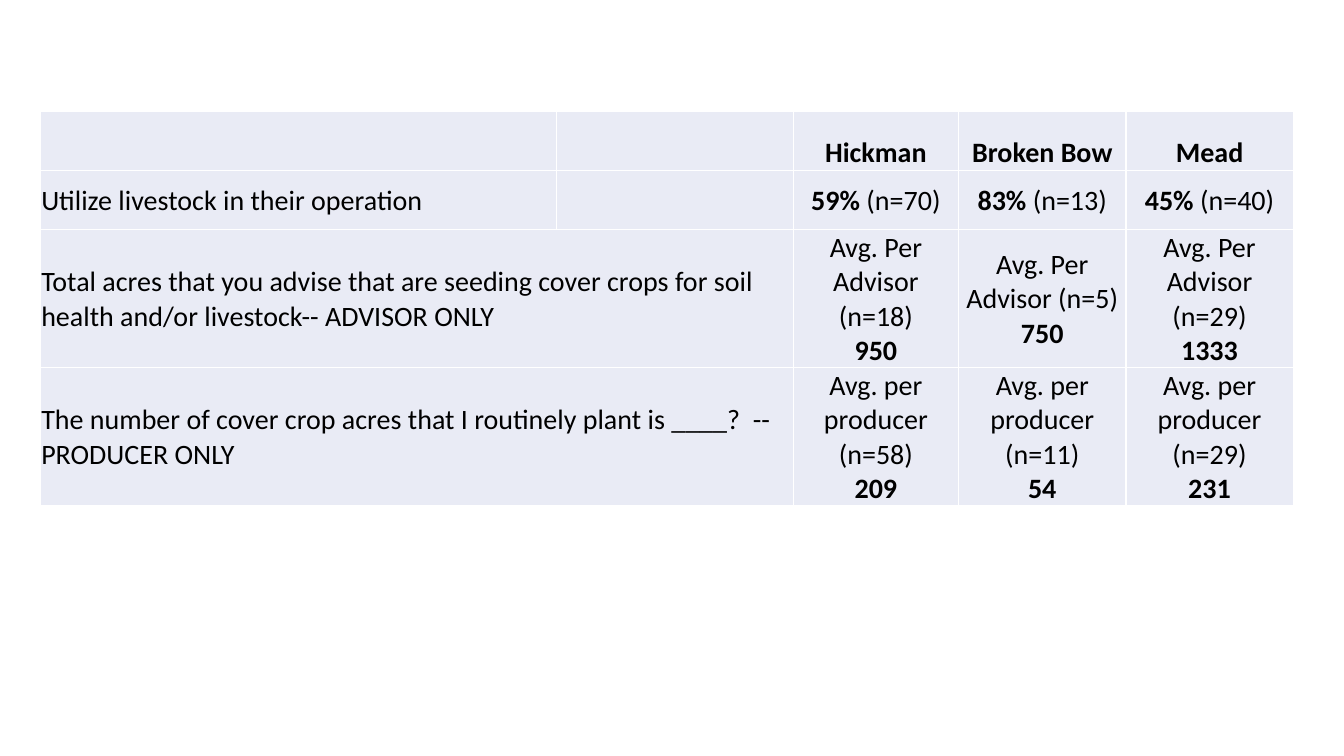
"""Builds a slide with a table of cover crop survey results for three towns."""
from lxml import etree
from pptx import Presentation
from pptx.dml.color import RGBColor
from pptx.enum.text import MSO_ANCHOR, PP_ALIGN
from pptx.oxml.ns import qn
from pptx.util import Pt

LEFT, MID = PP_ALIGN.LEFT, PP_ALIGN.CENTER
LOW, HALF = MSO_ANCHOR.BOTTOM, MSO_ANCHOR.MIDDLE

TOWNS = ["Hickman", "Broken Bow", "Mead"]
USE = [("59%", "n=70"), ("83%", "n=13"), ("45%", "n=40")]
ADVICE = [("n=18", "950"), ("n=5", "750"), ("n=29", "1333")]
ACRES = [("n=58", "209"), ("n=11", "54"), ("n=29", "231")]
ROWS = [
    ("", [[[(town, True)]] for town in TOWNS]),
    ("Utilize livestock in their operation",
     [[[(f"{share} ", True), (f"({size})", False)]] for share, size in USE]),
    ("Total acres that you advise that are seeding cover crops for soil "
     "health and/or livestock-- ADVISOR ONLY",
     [[[(f"Avg. Per Advisor ({size})", False)], [(mean, True)]] for size, mean in ADVICE]),
    ("The number of cover crop acres that I routinely plant is ____?  -- PRODUCER ONLY",
     [[[(f"Avg. per producer ({size})", False)], [(mean, True)]] for size, mean in ACRES]),
]
WIDE = [368.6, 169.2, 118.2, 119.5, 119.5]
HIGH = [42.3, 42.3, 98.4, 98.4]
SPOT = (28.8, 79.5)
SPANS = (2, 3)
INK, PALE, WHITE = "000000", "E9EBF5", "FFFFFF"
EDGES = ("a:lnL", "a:lnR", "a:lnT", "a:lnB")
INSET = {"margin_left": Pt(0.7), "margin_right": Pt(0.7),
         "margin_top": Pt(0.7), "margin_bottom": Pt(0)}
FONT = {"name": "Calibri", "size": Pt(20)}


def tint(form, code):
    form.rgb = RGBColor.from_string(code)


def apply(item, form):
    for key, value in form.items():
        setattr(item, key, value)


def frame(cell):
    props = cell._tc.get_or_add_tcPr()
    for spot, edge in enumerate(EDGES):
        line = etree.Element(qn(edge), w=str(Pt(1)))
        fill = etree.SubElement(line, qn("a:solidFill"))
        etree.SubElement(fill, qn("a:srgbClr"), val=WHITE)
        props.insert(spot, line)


def write(cell, paras, align, anchor):
    apply(cell, {**INSET, "vertical_anchor": anchor})
    body = cell.text_frame
    for spot, runs in enumerate(paras):
        para = body.add_paragraph() if spot else body.paragraphs[0]
        para.alignment = align
        for text, bold in runs:
            run = para.add_run()
            run.text = text
            apply(run.font, {**FONT, "bold": bold})
            tint(run.font.color, INK)


def main():
    deck = Presentation()
    apply(deck, {"slide_width": Pt(960), "slide_height": Pt(540)})
    slide = deck.slides.add_slide(deck.slide_layouts[6])
    area = (*SPOT, sum(WIDE), sum(HIGH))
    table = slide.shapes.add_table(len(ROWS), len(WIDE), *map(Pt, area)).table
    apply(table, {"first_row": False, "horz_banding": False})
    for col, wide in zip(table.columns, WIDE):
        col.width = Pt(wide)
    for row, high in zip(table.rows, HIGH):
        row.height = Pt(high)
    for cell in table.iter_cells():
        cell.fill.solid()
        tint(cell.fill.fore_color, PALE)
        frame(cell)
    for row, (label, stats) in enumerate(ROWS):
        if row in SPANS:
            table.cell(row, 0).merge(table.cell(row, 1))
        if label:
            write(table.cell(row, 0), [[(label, False)]], LEFT, HALF)
        for col, paras in enumerate(stats, 2):
            write(table.cell(row, col), paras, MID, HALF if row else LOW)
    deck.save("out.pptx")


if __name__ == "__main__":
    main()
